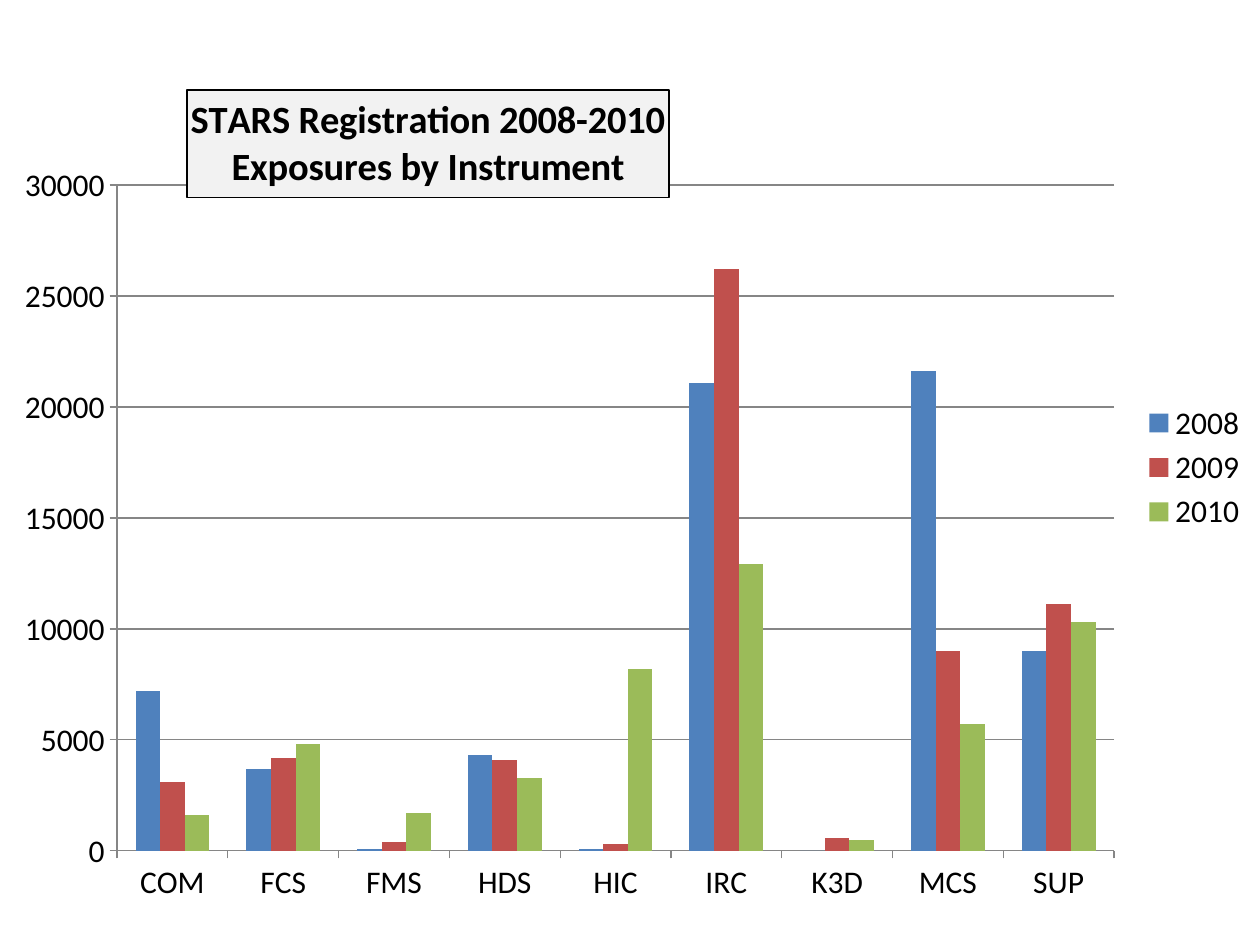
from lxml import etree
from pptx import Presentation
from pptx import util as u
from pptx.chart.data import CategoryChartData
from pptx.dml.color import RGBColor
from pptx.enum import chart as ch, text
from pptx.oxml import ns

PX = 914400 // 126
SLIDE_W, SLIDE_H = 1260, 945
CHART_BOX = (0, 16, 1260, 903)
PLOT_BOX = (117, 185, 997, 666)
TITLE_CORNER = (187, 90)

FONT = "Calibri"
BLACK, GRID_GREY, TITLE_FILL = "000000", "868686", "F2F2F2"

INSTRUMENTS = ["COM", "FCS", "FMS", "HDS", "HIC", "IRC", "K3D", "MCS", "SUP"]
EXPOSURES = {
    "2008": ("4F81BD", [7200, 3700, 100, 4300, 100, 21100, 0, 21600, 9000]),
    "2009": ("C0504D", [3100, 4200, 400, 4100, 300, 26200, 600, 9000, 11100]),
    "2010": ("9BBB59", [1600, 4800, 1700, 3300, 8200, 12900, 500, 5700, 10300]),
}
TITLE_LINES = ["STARS Registration 2008-2010", "Exposures by Instrument"]


def px(length):
    return u.Emu(length * PX)


def paint(target, colour):
    """Colour a font, or give a fill one solid colour."""
    if hasattr(target, "solid"):
        target.solid()
        target.fore_color.rgb = RGBColor.from_string(colour)
    else:
        target.color.rgb = RGBColor.from_string(colour)


def style_font(font, size, bold=False):
    font.name, font.size, font.bold = FONT, u.Pt(size), bold
    paint(font, BLACK)


def style_line(line, colour, width=0.75):
    paint(line.fill, colour)
    line.width = u.Pt(width)


def place(parent, left, top, width=None, height=None, inner=False):
    """Give a chart part a fixed place, from slide pixels."""
    chart_left, chart_top, chart_w, chart_h = CHART_BOX
    layout = parent.find(ns.qn("c:layout"))
    if layout is None:
        layout = etree.Element(ns.qn("c:layout"))
        parent.insert(0, layout)
    manual = etree.SubElement(layout, ns.qn("c:manualLayout"))
    settings = [("layoutTarget", "inner")] if inner else []
    settings += [("xMode", "edge"), ("yMode", "edge"),
                 ("x", round((left - chart_left) / chart_w, 4)),
                 ("y", round((top - chart_top) / chart_h, 4))]
    if width:
        settings += [("w", round(width / chart_w, 4)),
                     ("h", round(height / chart_h, 4))]
    for tag, value in settings:
        etree.SubElement(manual, ns.qn("c:" + tag)).set("val", str(value))


def add_exposure_chart(slide):
    data = CategoryChartData()
    data.categories = INSTRUMENTS
    for year, (_, counts) in EXPOSURES.items():
        data.add_series(year, counts)
    chart = slide.shapes.add_chart(ch.XL_CHART_TYPE.COLUMN_CLUSTERED,
                                   *map(px, CHART_BOX), data).chart
    style_font(chart.font, 18)
    columns = chart.plots[0]
    columns.gap_width, columns.overlap = 150, 0
    columns.vary_by_categories = False
    for series, (colour, _) in zip(columns.series, EXPOSURES.values()):
        paint(series.format.fill, colour)
        series.invert_if_negative = False
    place(chart._chartSpace.chart.plotArea, *PLOT_BOX, inner=True)
    return chart


def style_axes(chart):
    for axis in (chart.category_axis, chart.value_axis):
        axis.major_tick_mark = ch.XL_TICK_MARK.OUTSIDE
        axis.minor_tick_mark = ch.XL_TICK_MARK.NONE
        style_line(axis.format.line, GRID_GREY)
        style_font(axis.tick_labels.font, 18)
    counts = chart.value_axis
    counts.minimum_scale, counts.maximum_scale = 0, 30000
    counts.major_unit = 5000
    counts.has_major_gridlines = True
    style_line(counts.major_gridlines.format.line, GRID_GREY)


def add_legend(chart):
    chart.has_legend = True
    chart.legend.position = ch.XL_LEGEND_POSITION.RIGHT
    chart.legend.include_in_layout = False
    style_font(chart.legend.font, 18)


def add_title(chart):
    chart.has_title = True
    title = chart.chart_title
    frame = title.text_frame
    for number, line in enumerate(TITLE_LINES):
        paragraph = frame.add_paragraph() if number else frame.paragraphs[0]
        paragraph.alignment = text.PP_ALIGN.CENTER
        run = paragraph.add_run()
        run.text = line
        style_font(run.font, 22, bold=True)
    paint(title.format.fill, TITLE_FILL)
    style_line(title.format.line, BLACK)
    place(title._element, *TITLE_CORNER)
    title._element.find(ns.qn("c:overlay")).set("val", "1")


def main():
    deck = Presentation()
    deck.slide_width, deck.slide_height = px(SLIDE_W), px(SLIDE_H)
    slide = deck.slides.add_slide(deck.slide_layouts[6])

    # Columns of exposures per instrument, one series a year
    chart = add_exposure_chart(slide)
    style_axes(chart)
    add_legend(chart)

    # Boxed title over the plot
    add_title(chart)

    deck.save("out.pptx")


if __name__ == "__main__":
    main()
